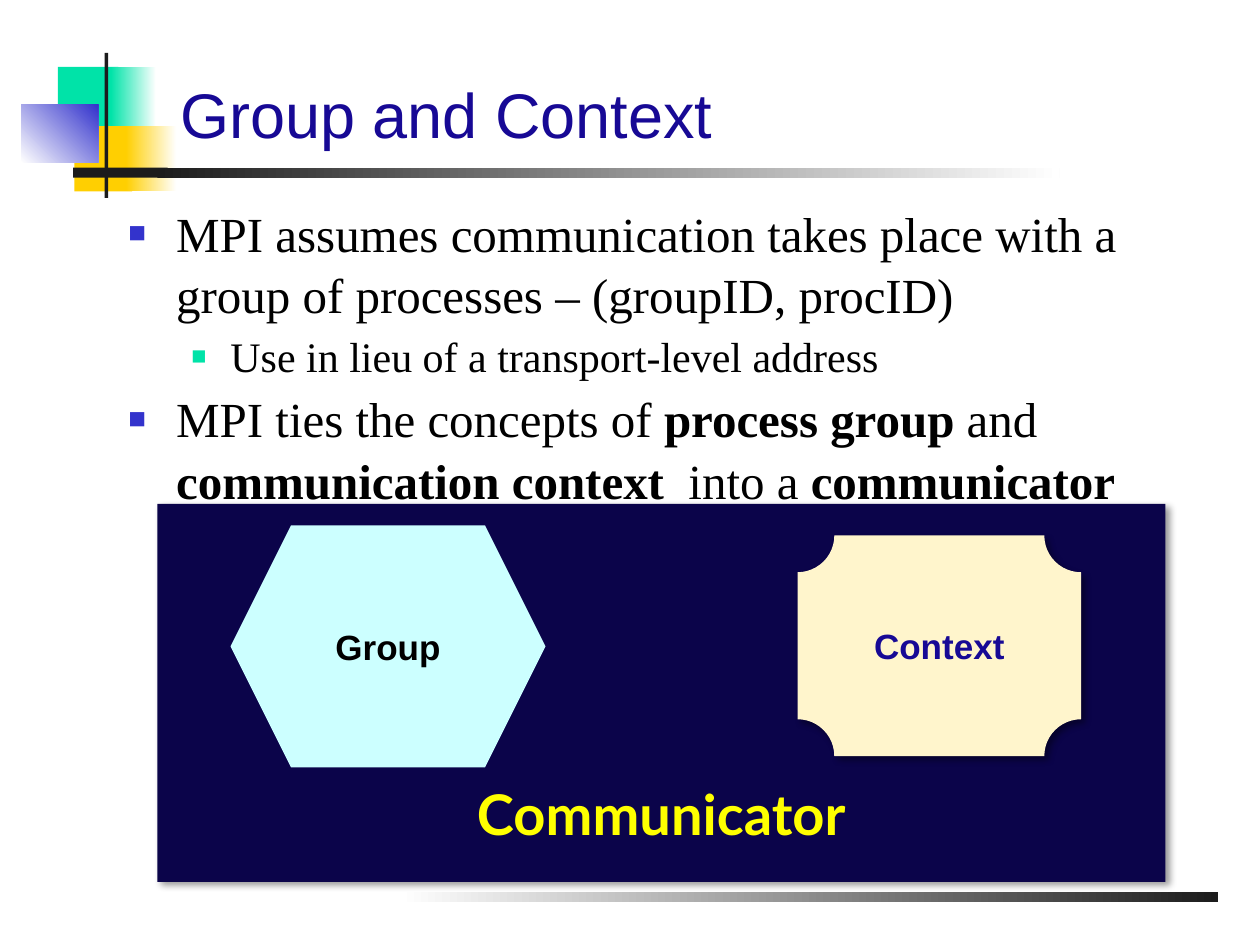
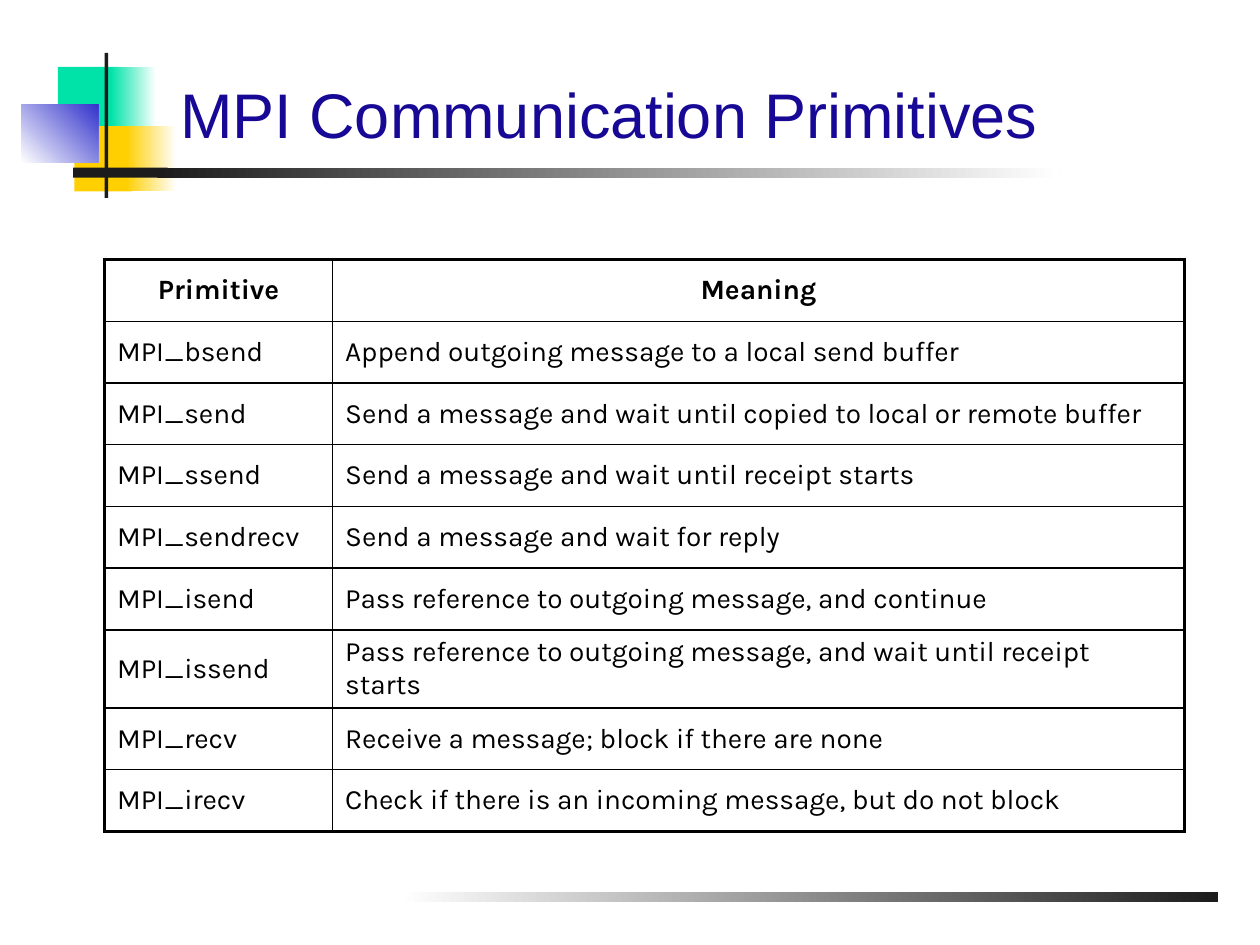
import pptx
import pptx.util
import pptx.dml.color
import pptx.enum.shapes
import pptx.enum.text
import pptx.oxml
import pptx.oxml.ns
import lxml.etree

Inches, Pt = pptx.util.Inches, pptx.util.Pt
Kind = pptx.enum.shapes.MSO_SHAPE
Align = pptx.enum.text.PP_ALIGN
Anchor = pptx.enum.text.MSO_ANCHOR

# ---- content ----
WIDE, HIGH = 10, 7.5
INK, WHITE, BLACK, NAVY = "1C1C1C", "FFFFFF", "000000", "170995"
GREEN, GOLD, BLUE = "00E3A8", "FFCF01", "3333CC"

# left, top, width, height, colour or (from, to), angle
DECOR = [
    (3.17, 7.08, 6.5, 0.08, (WHITE, INK), 0),
    (0.46, 0.53, 0.48, 0.52, GREEN, 0),
    (0.88, 0.53, 0.36, 0.52, (GREEN, WHITE), 0),
    (0.59, 1, 0.46, 0.52, GOLD, 0),
    (1, 1, 0.4, 0.52, (GOLD, WHITE), 0),
    (0.17, 0.83, 0.61, 0.46, (WHITE, BLUE), 45),
    (0.83, 0.42, 0.03, 1.15, INK, 0),
    (0.58, 1.33, 0.75, 0.08, INK, 0),
    (1.25, 1.33, 7.16, 0.08, (INK, WHITE), 0),
]

# level, runs of (text, bold)
POINTS = [
    (0, [("MPI assumes communication takes place with a group of processes "
          "– (groupID, procID)", False)]),
    (1, [("Use in lieu of a transport-level address", False)]),
    (0, [("MPI ties the concepts of ", False), ("process group ", True),
         ("and ", False), ("communication context ", True),
         (" into a ", False), ("communicator", True)]),
]
# size, margin, hang, bullet colour
LEVELS = [(28, 0.38, 0.38, BLUE), (24, 0.81, 0.31, GREEN)]

CALLS = [
    ("Primitive", "Meaning"),
    ("MPI_bsend", "Append outgoing message to a local send buffer"),
    ("MPI_send", "Send a message and wait until copied to local or remote buffer"),
    ("MPI_ssend", "Send a message and wait until receipt starts"),
    ("MPI_sendrecv", "Send a message and wait for reply"),
    ("MPI_isend", "Pass reference to outgoing message, and continue"),
    ("MPI_issend", "Pass reference to outgoing message, and wait until receipt starts"),
    ("MPI_recv", "Receive a message; block if there are none"),
    ("MPI_irecv", "Check if there is an incoming message, but do not block"),
]
COLS, ROW = (1.81, 6.76), 0.49
THIN, THICK = 1, 2.25


# ---- helpers ----
def rgb(code):
    return pptx.dml.color.RGBColor.from_string(code)


def node(parent, tag, **attrs):
    item = lxml.etree.SubElement(parent, pptx.oxml.ns.qn("a:" + tag))
    for key, value in attrs.items():
        item.set(key, str(value))
    return item


def write(para, text, size=16, font="Arial", color=BLACK, bold=False, align=None):
    """Add one run to a paragraph."""
    run = para.add_run()
    run.text = text
    run.font.size, run.font.name, run.font.bold = Pt(size), font, bold
    run.font.color.rgb = rgb(color)
    if align is not None:
        para.alignment = align


def draw(slide, kind, left, top, width, height, paint, angle=0, shade=False):
    """Add a borderless shape, filled flat or with a two-colour gradient."""
    shape = slide.shapes.add_shape(kind, *map(Inches, (left, top, width, height)))
    shape.shadow.inherit = False
    shape.line.fill.background()
    if isinstance(paint, tuple):
        shape.fill.gradient()
        shape.fill.gradient_angle = angle
        for stop, color in zip(shape.fill.gradient_stops, paint):
            stop.color.rgb = rgb(color)
    else:
        shape.fill.solid()
        shape.fill.fore_color.rgb = rgb(paint)
    if shade:
        effect = shape._element.spPr.find(pptx.oxml.ns.qn("a:effectLst"))
        cast = node(effect, "outerShdw", blurRad=Pt(4), dist=Pt(3),
                    dir=45 * 60000, algn="tl", rotWithShape=0)
        node(node(cast, "srgbClr", val=BLACK), "alpha", val=40000)
    return shape


def label(shape, text, **style):
    write(shape.text_frame.paragraphs[0], text, bold=True, align=Align.CENTER, **style)


def start(deck, text):
    """Add a slide with the shared marks and title."""
    slide = deck.slides.add_slide(deck.slide_layouts[5])
    for *place, paint, angle in DECOR:
        draw(slide, Kind.RECTANGLE, *place, paint, angle)
    title = slide.shapes.title
    title.left, title.top = Inches(1.33), Inches(0.58)
    title.width, title.height = Inches(8.5), Inches(0.67)
    frame = title.text_frame
    frame.auto_size = pptx.enum.text.MSO_AUTO_SIZE.NONE
    frame.vertical_anchor = Anchor.BOTTOM
    write(frame.paragraphs[0], text, size=36, color=NAVY, align=Align.LEFT)
    return slide


def list_points(slide):
    box = slide.shapes.add_textbox(*map(Inches, (0.92, 1.54, 8.88, 2.4)))
    frame = box.text_frame
    frame.word_wrap = True
    for i, (level, runs) in enumerate(POINTS):
        para = frame.add_paragraph() if i else frame.paragraphs[0]
        size, margin, hang, color = LEVELS[level]
        props = para._p.get_or_add_pPr()
        props.set("marL", str(Inches(margin)))
        props.set("indent", str(-Inches(hang)))
        node(node(props, "buClr"), "srgbClr", val=color)
        node(props, "buSzPct", val=60000)
        node(props, "buFont", typeface="Arial")
        node(props, "buChar", char="■")
        para.level = level
        para.line_spacing = 1.05
        if i:
            para.space_before = Pt(size / 10)
        for text, bold in runs:
            write(para, text, size=size, font="Times New Roman", bold=bold)


def edge(cell, **widths):
    """Draw cell borders, given as L, R, T and B widths."""
    props = cell._tc.get_or_add_tcPr()
    for side, width in widths.items():
        line = node(props, "ln" + side, w=Pt(width))
        node(node(line, "solidFill"), "srgbClr", val=BLACK)


def list_calls(slide):
    place = map(Inches, (0.83, 2.06, sum(COLS), ROW * len(CALLS)))
    table = slide.shapes.add_table(len(CALLS), len(COLS), *place).table
    table.first_row = table.horz_banding = False
    for col, width in zip(table.columns, COLS):
        col.width = Inches(width)
    for r, texts in enumerate(CALLS):
        table.rows[r].height = Inches(ROW)
        for c, text in enumerate(texts):
            cell = table.cell(r, c)
            edge(cell,
                 L=THIN if c else THICK,
                 R=THIN if c < len(COLS) - 1 else THICK,
                 T=THIN if r else THICK,
                 B=THIN if r < len(CALLS) - 1 else THICK)
            cell.fill.background()
            cell.vertical_anchor = Anchor.MIDDLE
            write(cell.text_frame.paragraphs[0], text, font="Karla", bold=r == 0,
                  align=Align.LEFT if r else Align.CENTER)


def main():
    deck = pptx.Presentation()
    deck.slide_width, deck.slide_height = Inches(WIDE), Inches(HIGH)

    slide = start(deck, "Group and Context")
    list_points(slide)
    panel = draw(slide, Kind.RECTANGLE, 1.25, 4, 8, 3, "0B044A", shade=True)
    panel.text_frame.vertical_anchor = Anchor.BOTTOM
    panel.text_frame.margin_bottom = Inches(0.28)
    label(panel, "Communicator", size=32, font="Lato", color="FFFF00")
    group = draw(slide, Kind.HEXAGON, 1.83, 4.17, 2.5, 1.92, "CCFFFF")
    label(group, "Group", size=20)
    context = draw(slide, Kind.PLAQUE, 6.33, 4.25, 2.25, 1.75, "FFF5CC", shade=True)
    label(context, "Context", size=20, color=NAVY)

    list_calls(start(deck, "MPI Communication Primitives"))
    deck.save("out.pptx")


if __name__ == "__main__":
    main()
